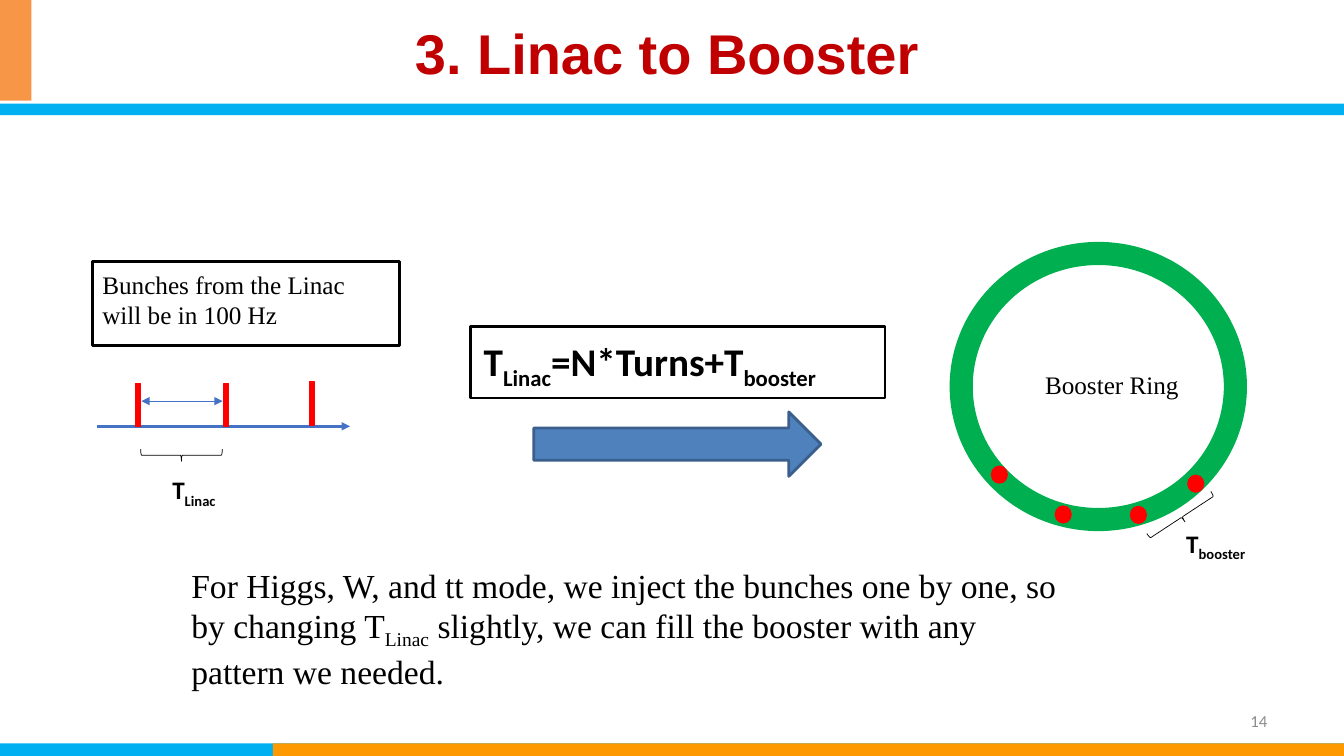
"""Build the slide on injection from the linac to the booster."""
from dataclasses import dataclass

from lxml import etree
from pptx import Presentation, util as u
from pptx.dml.color import RGBColor
from pptx.enum import shapes, text
from pptx.oxml.ns import qn


@dataclass
class Theme:
    red: str = "C00000"
    bunch: str = "FF0000"
    ring: str = "00B050"
    sky: str = "00B0F0"
    gold: str = "FF9900"
    peach: str = "F79646"
    axis: str = "4472C4"
    arrow: str = "4F81BD"
    edge: str = "3A5F8C"
    black: str = "000000"
    gray: str = "8C8C8C"
    head: str = "Arial"
    sans: str = "Calibri"
    serif: str = "Times New Roman"
    title: int = 40
    rule: int = 28
    body: int = 24
    label: int = 18
    page: int = 12


T = Theme()
Pt = u.Pt
Kind = shapes.MSO_SHAPE
Align = text.PP_ALIGN
rgb = RGBColor.from_string

deck = Presentation()
deck.slide_width, deck.slide_height = Pt(960), Pt(540)
slide = deck.slides.add_slide(deck.slide_layouts[6])


def draw(kind, x, y, w, h, fill=None, line=None, width=1, turn=0):
    """Add a preset shape."""
    item = slide.shapes.add_shape(kind, Pt(x), Pt(y), Pt(w), Pt(h))
    item.shadow.inherit = False
    item.rotation = turn
    if fill:
        item.fill.solid()
        item.fill.fore_color.rgb = rgb(fill)
    else:
        item.fill.background()
    if line:
        item.line.color.rgb = rgb(line)
        item.line.width = Pt(width)
    else:
        item.line.fill.background()
    return item


def write(words, x, y, w, h, size=T.label, font=T.serif, color=T.black,
          bold=False, align=Align.LEFT, middle=False, before=0, space=1.0):
    """Add text; every second part between underscores is a subscript."""
    box = slide.shapes.add_textbox(Pt(x), Pt(y), Pt(w), Pt(h))
    frame = box.text_frame
    frame.word_wrap = True
    if middle:
        frame.vertical_anchor = text.MSO_ANCHOR.MIDDLE
    para = frame.paragraphs[0]
    para.alignment = align
    para.space_before = Pt(before)
    para.line_spacing = space
    for i, part in enumerate(words.split("_")):
        if not part:
            continue
        run = para.add_run()
        run.text = part
        run.font.size, run.font.name, run.font.bold = Pt(size), font, bold
        run.font.color.rgb = rgb(color)
        if i % 2:
            run.font._element.set("baseline", "-25000")


for x, y, w, h, fill in [
    (0, 531, 960, 9, T.sky),
    (195, 531, 765, 9, T.gold),
    (0, 74, 960, 8.3, T.sky),
    (0, 0, 22.5, 72, T.peach),
]:
    draw(Kind.RECTANGLE, x, y, w, h, fill)

write("3. Linac to Booster", 52.5, 11.5, 847.5, 57, size=T.title, font=T.head,
      color=T.red, bold=True, align=Align.CENTER, middle=True, space=0.9)

for x, end, y, width, tips in [
    (69, 250, 304.5, 2, ["tailEnd"]),
    (101, 159, 286.5, 0.5, ["headEnd", "tailEnd"]),
]:
    line = slide.shapes.add_connector(
        shapes.MSO_CONNECTOR.STRAIGHT, Pt(x), Pt(y), Pt(end), Pt(y))
    line.line.color.rgb = rgb(T.axis)
    line.line.width = Pt(width)
    for tip in tips:
        etree.SubElement(line.line._get_or_add_ln(), qn("a:" + tip), type="triangle")
    etree.SubElement(line._element.spPr, qn("a:effectLst"))

for x, y in [(97, 273.8), (160, 273.8), (221, 272.7)]:
    draw(Kind.RECTANGLE, x, y, 3.3, 31, T.bunch, T.bunch)

write("Bunches from the Linac will be in 100 Hz", 66, 188.5, 219.5, 51)
draw(Kind.RECTANGLE, 66.3, 186.6, 219, 60.3, line=T.black, width=2)
draw(Kind.LEFT_BRACE, 125.3, 296, 8.6, 58.3, line=T.black, width=0.5, turn=270)
write("T_Linac_", 116, 335.5, 69, 29, font=T.sans, bold=True)

ring = draw(Kind.DONUT, 678.3, 172.8, 212.4, 206.6, T.ring)
ring.adjustments[0] = 0.08
for x, y in [(807, 361.3), (753.3, 361), (707.7, 332.5), (848, 339)]:
    draw(Kind.OVAL, x, y, 12.3, 13, T.bunch)
write("Booster Ring", 739.4, 260, 128, 26.6)
draw(Kind.LEFT_BRACE, 840.2, 342, 8, 54.7, line=T.black, width=0.5, turn=236.7)
write("T_booster_", 840.2, 373.7, 65, 26.6, font=T.sans, bold=True)

write("T_Linac_=N*Turns+T_booster_", 338.4, 237.6, 302.4, 41,
      size=T.rule, font=T.sans, bold=True)
draw(Kind.RECTANGLE, 336.2, 233.3, 296, 51, line=T.black, width=2)
draw(Kind.DOWN_ARROW, 460.8, 214.6, 46, 205.2, T.arrow, T.edge, 2, 270)

write("For Higgs, W, and tt mode, we inject the bunches one by one, so by changing "
      "T_Linac_ slightly, we can fill the booster with any pattern we needed.",
      129.6, 399.6, 635.8, 94.3, size=T.body, before=6)
write("14", 688.3, 500.4, 224, 28.8, size=T.page, font=T.sans, color=T.gray,
      align=Align.RIGHT, middle=True)

deck.save("out.pptx")
